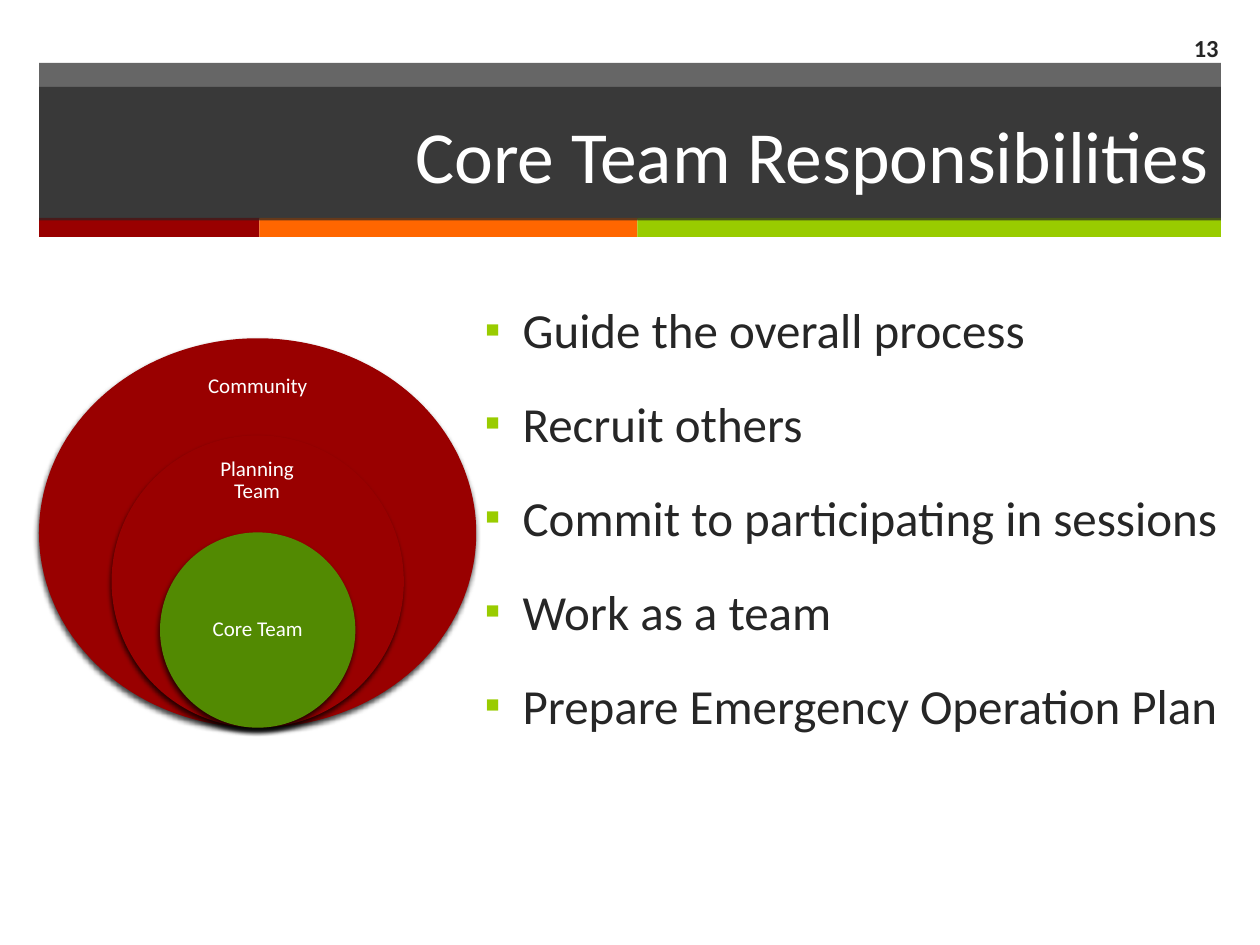
"""Build the Core Team Responsibilities slide on a grid of 100 columns by 75 rows."""
from dataclasses import dataclass

import lxml.etree
import pptx
import pptx.dml.color
import pptx.enum.shapes
import pptx.enum.text
import pptx.oxml.ns
import pptx.util

COLORS = {
    "charcoal": "262626",
    "white": "FFFFFF",
    "red": "990000",
    "orange": "FF6600",
    "lime": "99CC00",
    "green": "528A02",
    "black": "000000",
}
FONT = "Calibri"
COLUMNS, ROWS = 100, 75
BAND_LEFT, BAND_WIDTH = 3.1, 93.8
RING_CENTER, RING_BOTTOM = 20.45, 57.75
SHAPES = pptx.enum.shapes.MSO_SHAPE
ALIGN = pptx.enum.text.PP_ALIGN
ANCHOR = pptx.enum.text.MSO_ANCHOR


@dataclass
class Box:
    column: float
    row: float
    columns: float
    rows: float


@dataclass
class Style:
    size: float
    color: str
    alignment: int
    bold: bool = False
    anchor: int = ANCHOR.MIDDLE
    inset: float = 0.1


@dataclass
class Stripe:
    columns: float
    color: str


@dataclass
class Ring:
    columns: float
    rows: float
    color: str
    label: str
    label_box: Box


STRIPES = [Stripe(17.5, "red"), Stripe(30, "orange"), Stripe(46.3, "lime")]
RINGS = [
    Ring(34.7, 30.9, "red", "Community", Box(14.4, 28.4, 12.1, 4.6)),
    Ring(23.2, 23.2, "red", "Planning Team", Box(15, 36, 10.8, 4.3)),
    Ring(15.5, 15.5, "green", "Core Team", Box(15, 46.1, 10.9, 7.7)),
]
DUTIES = [
    "Guide the overall process",
    "Recruit others",
    "Commit to participating in sessions",
    "Work as a team",
    "Prepare Emergency Operation Plan",
]
TITLE_STYLE = Style(42, "white", ALIGN.RIGHT)
NUMBER_STYLE = Style(14, "charcoal", ALIGN.RIGHT, bold=True)
LABEL_STYLE = Style(12, "white", ALIGN.CENTER, inset=0.09)
DUTY_STYLE = Style(28, "charcoal", ALIGN.LEFT, anchor=ANCHOR.TOP)


def rgb(name: str) -> pptx.dml.color.RGBColor:
    return pptx.dml.color.RGBColor.from_string(COLORS[name])


def add_xml(parent, tag: str, **attributes: str):
    return lxml.etree.SubElement(parent, pptx.oxml.ns.qn(tag), attributes)


def place(box: Box, presentation) -> list[int]:
    column = presentation.slide_width / COLUMNS
    row = presentation.slide_height / ROWS
    return [
        round(box.column * column),
        round(box.row * row),
        round(box.columns * column),
        round(box.rows * row),
    ]


def draw_shape(presentation, slide, kind: int, box: Box, color: str, opacity: int = 100):
    shape = slide.shapes.add_shape(kind, *place(box, presentation))
    shape.shadow.inherit = False
    shape.fill.solid()
    shape.fill.fore_color.rgb = rgb(color)
    shape.line.fill.background()
    if opacity < 100:
        fill = shape.element.spPr.find(pptx.oxml.ns.qn("a:solidFill"))
        add_xml(fill[0], "a:alpha", val=str(opacity * 1000))
    return shape


def write_text(shape, lines: list[str], style: Style) -> list:
    frame = shape.text_frame
    frame.word_wrap = True
    frame.vertical_anchor = style.anchor
    frame.margin_left = frame.margin_right = pptx.util.Inches(style.inset)
    frame.margin_top = frame.margin_bottom = pptx.util.Inches(min(style.inset, 0.05))
    frame.text = "\n".join(lines)
    for paragraph in frame.paragraphs:
        paragraph.alignment = style.alignment
        paragraph.font.name = FONT
        paragraph.font.size = pptx.util.Pt(style.size)
        paragraph.font.bold = style.bold
        paragraph.font.color.rgb = rgb(style.color)
    return list(frame.paragraphs)


def draw_text(presentation, slide, box: Box, lines: list[str], style: Style) -> list:
    return write_text(slide.shapes.add_textbox(*place(box, presentation)), lines, style)


def add_shadow(shape) -> None:
    effects = shape.element.spPr.find(pptx.oxml.ns.qn("a:effectLst"))
    shadow = add_xml(
        effects,
        "a:outerShdw",
        blurRad=str(pptx.util.Pt(3)),
        dist=str(pptx.util.Pt(2)),
        dir=str(110 * 60000),
        rotWithShape="0",
    )
    color = add_xml(shadow, "a:srgbClr", val=COLORS["black"])
    add_xml(color, "a:alpha", val="75000")


def add_bullet(paragraph) -> None:
    paragraph.space_before = pptx.util.Pt(20)
    properties = paragraph._p.get_or_add_pPr()
    properties.set("marL", str(pptx.util.Inches(0.5)))
    properties.set("indent", str(pptx.util.Inches(-0.3)))
    bullet = [
        add_xml(properties, "a:buClr"),
        add_xml(properties, "a:buSzPct", val="90000"),
        add_xml(properties, "a:buFont", typeface="Wingdings 2"),
        add_xml(properties, "a:buChar", char="▪"),
    ]
    bullet[2].set("typeface", FONT)
    add_xml(bullet[0], "a:srgbClr", val=COLORS["lime"])
    defaults = properties.find(pptx.oxml.ns.qn("a:defRPr"))
    if defaults is not None:
        properties.append(defaults)


def draw_header(presentation, slide) -> None:
    band = Box(BAND_LEFT, 5, BAND_WIDTH, 12.4)
    draw_shape(presentation, slide, SHAPES.RECTANGLE, band, "charcoal", 70)
    column = BAND_LEFT
    for stripe in STRIPES:
        box = Box(column, 17.3, stripe.columns, 1.5)
        draw_shape(presentation, slide, SHAPES.RECTANGLE, box, stripe.color)
        column += stripe.columns
    title_box = Box(BAND_LEFT, 6.9, BAND_WIDTH, 10.6)
    title = draw_shape(presentation, slide, SHAPES.RECTANGLE, title_box, "charcoal", 70)
    write_text(title, ["Core Team Responsibilities"], TITLE_STYLE)


def draw_ring(presentation, slide, ring: Ring) -> None:
    box = Box(RING_CENTER - ring.columns / 2, RING_BOTTOM - ring.rows, ring.columns, ring.rows)
    add_shadow(draw_shape(presentation, slide, SHAPES.OVAL, box, ring.color))
    for paragraph in draw_text(presentation, slide, ring.label_box, [ring.label], LABEL_STYLE):
        paragraph.line_spacing = 0.9


def main() -> None:
    presentation = pptx.Presentation()
    presentation.slide_width = pptx.util.Inches(10)
    presentation.slide_height = pptx.util.Inches(7.5)
    slide = presentation.slides.add_slide(presentation.slide_layouts[6])
    draw_header(presentation, slide)
    for paragraph in draw_text(presentation, slide, Box(35.5, 23.3, 62.8, 49.4), DUTIES, DUTY_STYLE):
        add_bullet(paragraph)
    for ring in RINGS:
        draw_ring(presentation, slide, ring)
    draw_text(presentation, slide, Box(90.8, 1.8, 6.9, 3.9), ["13"], NUMBER_STYLE)
    presentation.save("out.pptx")


if __name__ == "__main__":
    main()
